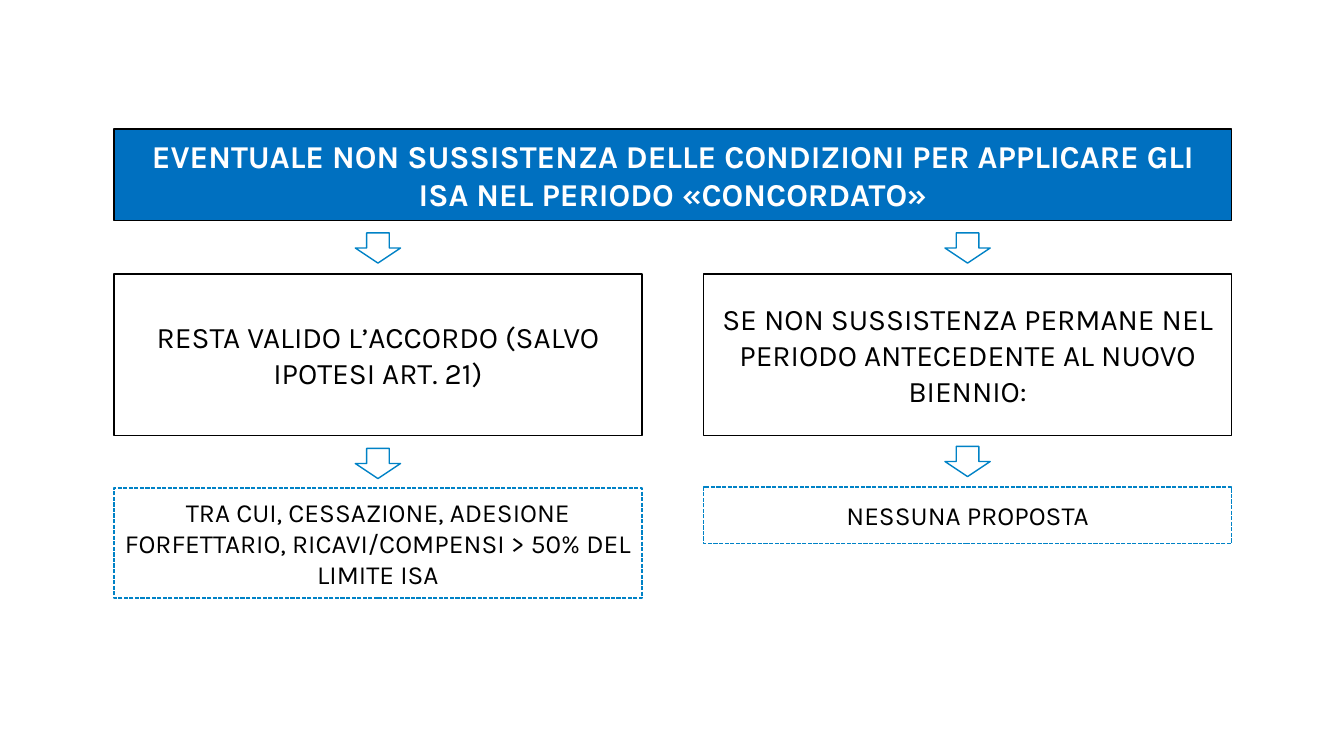
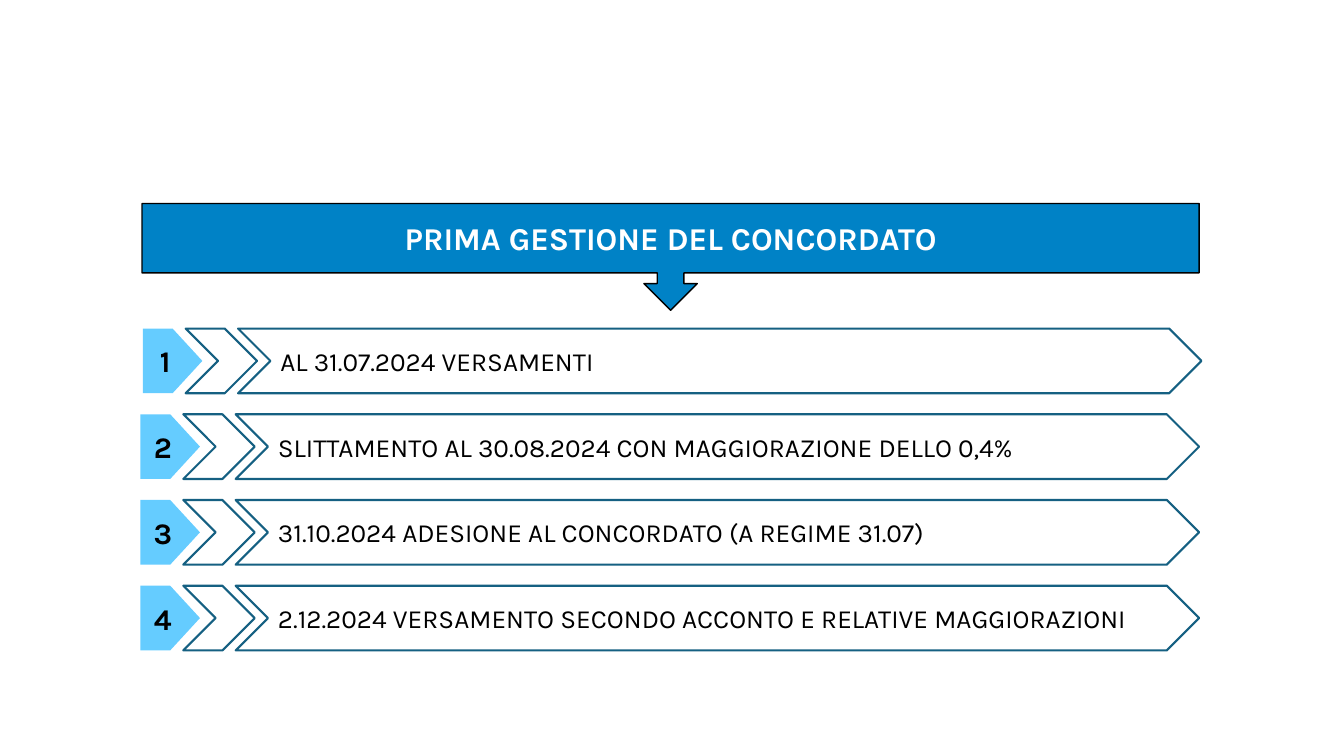
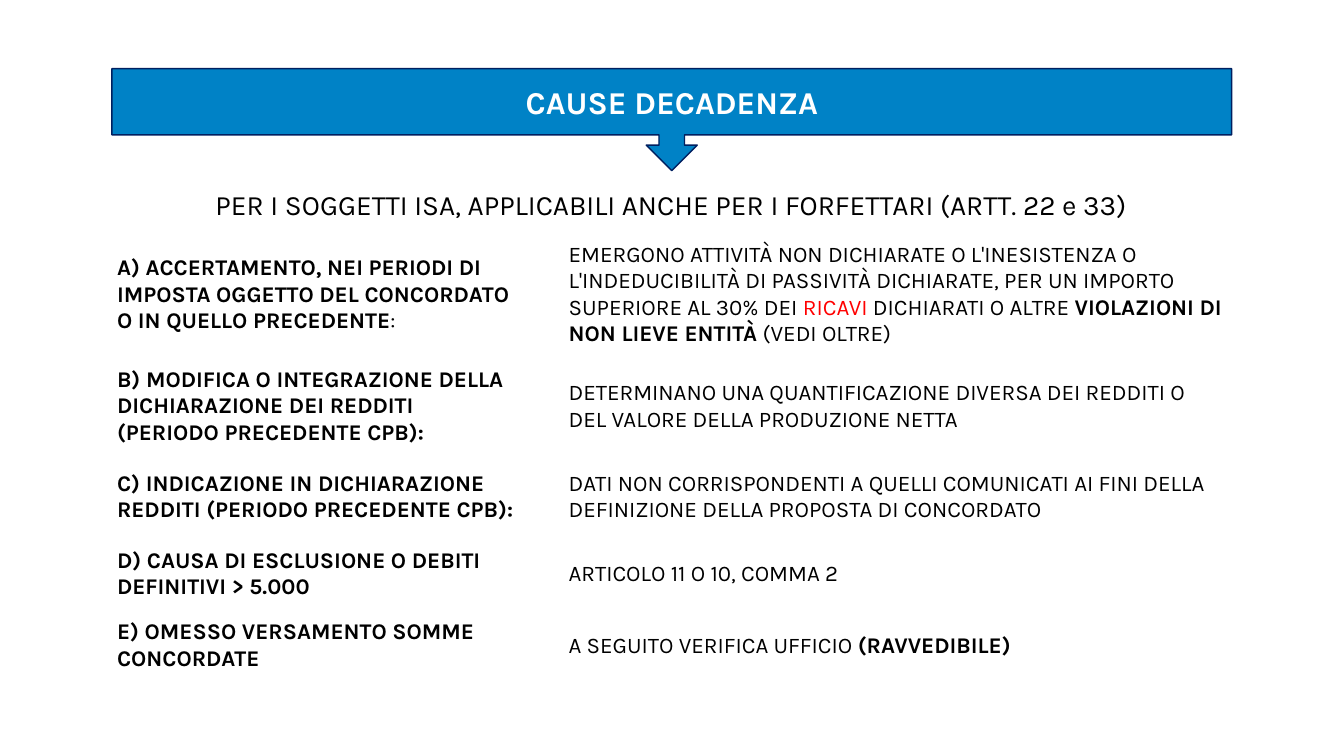
"""Build three slides on the two-year tax agreement."""
from typing import NamedTuple

from pptx import Presentation
from pptx.dml.color import RGBColor
from pptx.enum.dml import MSO_LINE
from pptx.enum.shapes import MSO_SHAPE
from pptx.enum.text import MSO_ANCHOR, PP_ALIGN
from pptx.shapes.autoshape import Shape
from pptx.slide import Slide
from pptx.util import Cm, Pt

RECTANGLE = MSO_SHAPE.RECTANGLE
DOWN_ARROW = MSO_SHAPE.DOWN_ARROW
CALLOUT = MSO_SHAPE.DOWN_ARROW_CALLOUT
PENTAGON = MSO_SHAPE.PENTAGON
CHEVRON = MSO_SHAPE.CHEVRON
DASHED = MSO_LINE.SQUARE_DOT
MIDDLE = MSO_ANCHOR.MIDDLE
CENTER = PP_ALIGN.CENTER
LEFT = PP_ALIGN.LEFT

FONT = "Karla"
TITLE_SIZE = 22.7
LARGE_SIZE = 21.3
BODY_SIZE = 18.7
COLORS = {
    "black": "000000",
    "white": "FFFFFF",
    "red": "FF0000",
    "blue": "0070C0",
    "azure": "0082C6",
    "sky": "65CCFF",
    "teal": "156082",
    "navy": "002060",
}


class Box(NamedTuple):
    """Position and size in centimetres."""
    left: float
    top: float
    width: float
    height: float


class Branch(NamedTuple):
    """One column of the decision diagram."""
    left: float
    statement: str
    outcome: str
    arrow_top: float
    outcome_top: float
    outcome_height: float


class Step(NamedTuple):
    """One numbered deadline."""
    left: float
    text: str


class Run(NamedTuple):
    """A piece of cell text with its format."""
    text: str
    bold: bool = False
    color: str = "black"


class Cause(NamedTuple):
    """One table row: its height, the cause and its explanation."""
    height: float
    cause: list[Run]
    detail: list[Run]


BRANCHES = [
    Branch(2.87, "RESTA VALIDO L’ACCORDO (SALVO IPOTESI ART. 21)",
           "TRA CUI, CESSAZIONE, ADESIONE FORFETTARIO, RICAVI/COMPENSI > 50% DEL LIMITE ISA",
           11.3, 12.3, 2.77),
    Branch(17.73, "SE NON SUSSISTENZA PERMANE NEL PERIODO ANTECEDENTE AL NUOVO BIENNIO:",
           "NESSUNA PROPOSTA", 11.25, 12.27, 1.42),
]

STEPS = [
    Step(3.6, "AL 31.07.2024 VERSAMENTI"),
    Step(3.54, "SLITTAMENTO AL 30.08.2024 CON MAGGIORAZIONE DELLO 0,4%"),
    Step(3.54, "31.10.2024 ADESIONE AL CONCORDATO (A REGIME 31.07)"),
    Step(3.54, "2.12.2024 VERSAMENTO SECONDO ACCONTO E RELATIVE MAGGIORAZIONI"),
]

CAUSES = [
    Cause(3.15,
          [Run("A) ACCERTAMENTO, NEI PERIODI DI IMPOSTA OGGETTO DEL CONCORDATO "
               "O IN QUELLO PRECEDENTE", bold=True), Run(":")],
          [Run("EMERGONO ATTIVITÀ NON DICHIARATE O L'INESISTENZA O L'INDEDUCIBILITÀ "
               "DI PASSIVITÀ DICHIARATE, PER UN IMPORTO SUPERIORE AL 30% DEI "),
           Run("RICAVI", color="red"), Run(" DICHIARATI O ALTRE "),
           Run("VIOLAZIONI DI NON LIEVE ENTITÀ", bold=True), Run(" (VEDI OLTRE)")]),
    Cause(2.49,
          [Run("B) MODIFICA O INTEGRAZIONE DELLA DICHIARAZIONE DEI REDDITI "
               "(PERIODO PRECEDENTE CPB):", bold=True)],
          [Run("DETERMINANO UNA QUANTIFICAZIONE DIVERSA DEI REDDITI O DEL VALORE "
               "DELLA PRODUZIONE NETTA")]),
    Cause(2.08,
          [Run("C) INDICAZIONE IN DICHIARAZIONE REDDITI (PERIODO PRECEDENTE CPB):", bold=True)],
          [Run("DATI NON CORRISPONDENTI A QUELLI COMUNICATI AI FINI DELLA DEFINIZIONE "
               "DELLA PROPOSTA DI CONCORDATO")]),
    Cause(1.8,
          [Run("D) CAUSA DI ESCLUSIONE O DEBITI DEFINITIVI > 5.000", bold=True)],
          [Run("ARTICOLO 11 O 10, COMMA 2")]),
    Cause(1.8,
          [Run("E) OMESSO VERSAMENTO SOMME CONCORDATE", bold=True)],
          [Run("A SEGUITO VERIFICA UFFICIO "), Run("(RAVVEDIBILE)", bold=True)]),
]


def rgb(color: str) -> RGBColor:
    """Look up a named colour."""
    return RGBColor.from_string(COLORS[color])


def write_text(paragraph, text: str, *, size: float, bold: bool = False,
               color: str = "black", align: PP_ALIGN = CENTER) -> None:
    """Append a formatted run to a paragraph."""
    paragraph.alignment = align
    run = paragraph.add_run()
    run.text = text
    run.font.name = FONT
    run.font.size = Pt(size)
    run.font.bold = bold
    run.font.color.rgb = rgb(color)


def add_box(slide: Slide, kind: MSO_SHAPE, box: Box, *, fill: str | None = None,
            line: str | None = None, line_width: float = 1,
            dash: MSO_LINE | None = None) -> Shape:
    """Draw a preset shape with the given fill and outline."""
    shape = slide.shapes.add_shape(kind, *(Cm(length) for length in box))
    shape.shadow.inherit = False
    if fill:
        shape.fill.solid()
        shape.fill.fore_color.rgb = rgb(fill)
    else:
        shape.fill.background()
    if line:
        shape.line.color.rgb = rgb(line)
        shape.line.width = Pt(line_width)
        if dash:
            shape.line.dash_style = dash
    else:
        shape.line.fill.background()
    shape.text_frame.word_wrap = True
    shape.text_frame.vertical_anchor = MIDDLE
    return shape


def add_banner(slide: Slide, text: str, box: Box, *, kind: MSO_SHAPE = CALLOUT,
               fill: str = "azure", line: str = "black") -> None:
    """Draw the title band of a slide."""
    banner = add_box(slide, kind, box, fill=fill, line=line)
    write_text(banner.text_frame.paragraphs[0], text, size=TITLE_SIZE, bold=True, color="white")


def add_branch(slide: Slide, branch: Branch) -> None:
    """Draw a statement, its outcome and the arrows leading to them."""
    width, arrow_width = 13.31, 1.14
    statement = add_box(slide, RECTANGLE, Box(branch.left, 6.91, width, 4.06), line="black")
    write_text(statement.text_frame.paragraphs[0], branch.statement, size=LARGE_SIZE)
    outcome_box = Box(branch.left, branch.outcome_top, width, branch.outcome_height)
    outcome = add_box(slide, RECTANGLE, outcome_box, fill="white", line="azure", dash=DASHED)
    write_text(outcome.text_frame.paragraphs[0], branch.outcome, size=BODY_SIZE)
    arrow_left = branch.left + (width - arrow_width) / 2
    for top in (5.87, branch.arrow_top):
        add_box(slide, DOWN_ARROW, Box(arrow_left, top, arrow_width, 0.76), line="azure")


def add_step(slide: Slide, number: int, step: Step) -> None:
    """Draw a numbered badge, a chevron and the text bar of a step."""
    height = 1.63
    top = 8.28 + (number - 1) * 2.16
    badge = add_box(slide, PENTAGON, Box(step.left, top, 1.5, height), fill="sky")
    write_text(badge.text_frame.paragraphs[0], str(number), size=LARGE_SIZE, bold=True)
    for offset, width, text in ((1.08, 1.8, ""), (2.4, 24.28, step.text)):
        chevron = add_box(slide, CHEVRON, Box(step.left + offset, top, width, height),
                          fill="white", line="teal", line_width=1.5)
        if text:
            write_text(chevron.text_frame.paragraphs[0], text, size=BODY_SIZE, align=LEFT)


def fill_cell(cell, runs: list[Run], *, size: float = 16, align: PP_ALIGN = LEFT) -> None:
    """Format a table cell and write its runs."""
    cell.fill.solid()
    cell.fill.fore_color.rgb = rgb("white")
    cell.vertical_anchor = MIDDLE
    cell.margin_left = cell.margin_right = Cm(0.61)
    cell.margin_top = cell.margin_bottom = Cm(0.23)
    for run in runs:
        write_text(cell.text_frame.paragraphs[0], run.text, size=size, bold=run.bold,
                   color=run.color, align=align)


def add_causes(slide: Slide) -> None:
    """Draw the table of causes under a merged heading."""
    heights = [1.3] + [cause.height for cause in CAUSES]
    widths = [11.38, 17.78]
    table = slide.shapes.add_table(len(heights), len(widths), Cm(2.34), Cm(4.55),
                                   Cm(sum(widths)), Cm(sum(heights))).table
    table.horz_banding = False
    for column, width in zip(table.columns, widths):
        column.width = Cm(width)
    for row, height in zip(table.rows, heights):
        row.height = Cm(height)
    heading = table.cell(0, 0)
    heading.merge(table.cell(0, 1))
    fill_cell(heading, [Run("PER I SOGGETTI ISA, APPLICABILI ANCHE PER I FORFETTARI "
                            "(ARTT. 22 e 33)")], size=20, align=CENTER)
    for index, cause in enumerate(CAUSES, start=1):
        fill_cell(table.cell(index, 0), cause.cause)
        fill_cell(table.cell(index, 1), cause.detail)


def main() -> None:
    """Build and save the presentation."""
    presentation = Presentation()
    presentation.slide_width, presentation.slide_height = Cm(33.87), Cm(19.05)
    blank = presentation.slide_layouts[6]

    conditions = presentation.slides.add_slide(blank)
    add_banner(conditions, "EVENTUALE NON SUSSISTENZA DELLE CONDIZIONI PER APPLICARE GLI "
               "ISA NEL PERIODO «CONCORDATO»", Box(2.87, 3.25, 28.17, 2.31),
               kind=RECTANGLE, fill="blue")
    for branch in BRANCHES:
        add_branch(conditions, branch)

    deadlines = presentation.slides.add_slide(blank)
    for number, step in enumerate(STEPS, start=1):
        add_step(deadlines, number, step)
    add_banner(deadlines, "PRIMA GESTIONE DEL CONCORDATO", Box(3.58, 5.13, 26.64, 2.69))

    forfeiture = presentation.slides.add_slide(blank)
    add_causes(forfeiture)
    add_banner(forfeiture, "CAUSE DECADENZA", Box(2.82, 1.73, 28.22, 2.57), line="navy")

    presentation.save("out.pptx")


if __name__ == "__main__":
    main()
